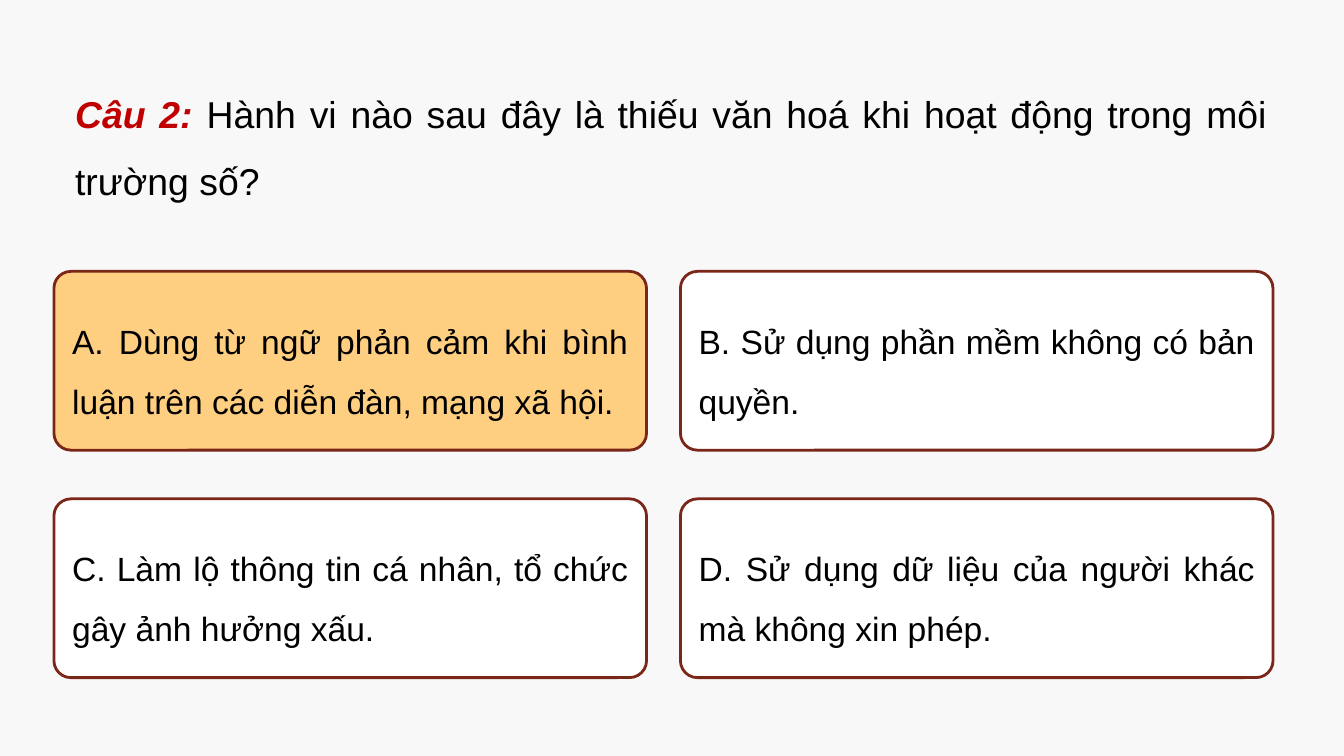
from pptx import Presentation
from pptx.dml.color import RGBColor
from pptx.enum.shapes import MSO_SHAPE
from pptx.enum.text import MSO_ANCHOR, MSO_AUTO_SIZE, PP_ALIGN
from pptx.util import Cm, Pt

LABEL = "Câu 2: "
QUESTION = "Hành vi nào sau đây là thiếu văn hoá khi hoạt động trong môi trường số?"
ANSWERS = [
    "A. Dùng từ ngữ phản cảm khi bình luận trên các diễn đàn, mạng xã hội.",
    "B. Sử dụng phần mềm không có bản quyền.",
    "C. Làm lộ thông tin cá nhân, tổ chức gây ảnh hưởng xấu.",
    "D. Sử dụng dữ liệu của người khác mà không xin phép.",
]
CORRECT = 0


def color(hex_value):
    """Turn a hex string into a colour."""
    return RGBColor.from_string(hex_value)


def style_paragraph(paragraph, size):
    """Set the shared text style of the quiz."""
    paragraph.alignment = PP_ALIGN.JUSTIFY
    paragraph.line_spacing = 1.5
    paragraph.font.name = "Arial"
    paragraph.font.size = Pt(size)
    paragraph.font.color.rgb = color("000000")


def add_question(slide, left, top, width, height):
    """Place the question with its highlighted label."""
    box = slide.shapes.add_textbox(Cm(left), Cm(top), Cm(width), Cm(height))
    frame = box.text_frame
    frame.word_wrap = True
    frame.auto_size = MSO_AUTO_SIZE.SHAPE_TO_FIT_TEXT
    paragraph = frame.paragraphs[0]
    style_paragraph(paragraph, 20)
    label = paragraph.add_run()
    label.text = LABEL
    label.font.bold = label.font.italic = True
    label.font.color.rgb = color("C00000")
    paragraph.add_run().text = QUESTION


def add_answer(slide, text, fill, left, top, width, height):
    """Place one rounded answer card."""
    card = slide.shapes.add_shape(
        MSO_SHAPE.ROUNDED_RECTANGLE, Cm(left), Cm(top), Cm(width), Cm(height)
    )
    card.adjustments[0] = 0.095
    card.shadow.inherit = False
    card.fill.solid()
    card.fill.fore_color.rgb = color(fill)
    card.line.color.rgb = color("7A2618")
    card.line.width = Pt(1.5)
    frame = card.text_frame
    frame.word_wrap = True
    frame.vertical_anchor = MSO_ANCHOR.MIDDLE
    frame.text = text
    style_paragraph(frame.paragraphs[0], 18)


def add_answers(slide, left, top, width, height):
    """Place the answers in a two by two grid."""
    card_width, card_height = 11.2, 3.38
    for index, text in enumerate(ANSWERS):
        row, column = divmod(index, 2)
        add_answer(
            slide,
            text,
            "FFCF81" if index == CORRECT else "FFFFFF",
            left + column * (width - card_width),
            top + row * (height - card_height),
            card_width,
            card_height,
        )


def main():
    """Build and save the quiz slide."""
    presentation = Presentation()
    presentation.slide_width = Cm(25.4)
    presentation.slide_height = Cm(14.29)
    slide = presentation.slides.add_slide(presentation.slide_layouts[6])
    slide.background.fill.solid()
    slide.background.fill.fore_color.rgb = color("F8F8F8")
    add_question(slide, 1.17, 1.17, 23.04, 2.67)
    add_answers(slide, 1.02, 5.13, 23.04, 7.68)
    presentation.save("out.pptx")


if __name__ == "__main__":
    main()
